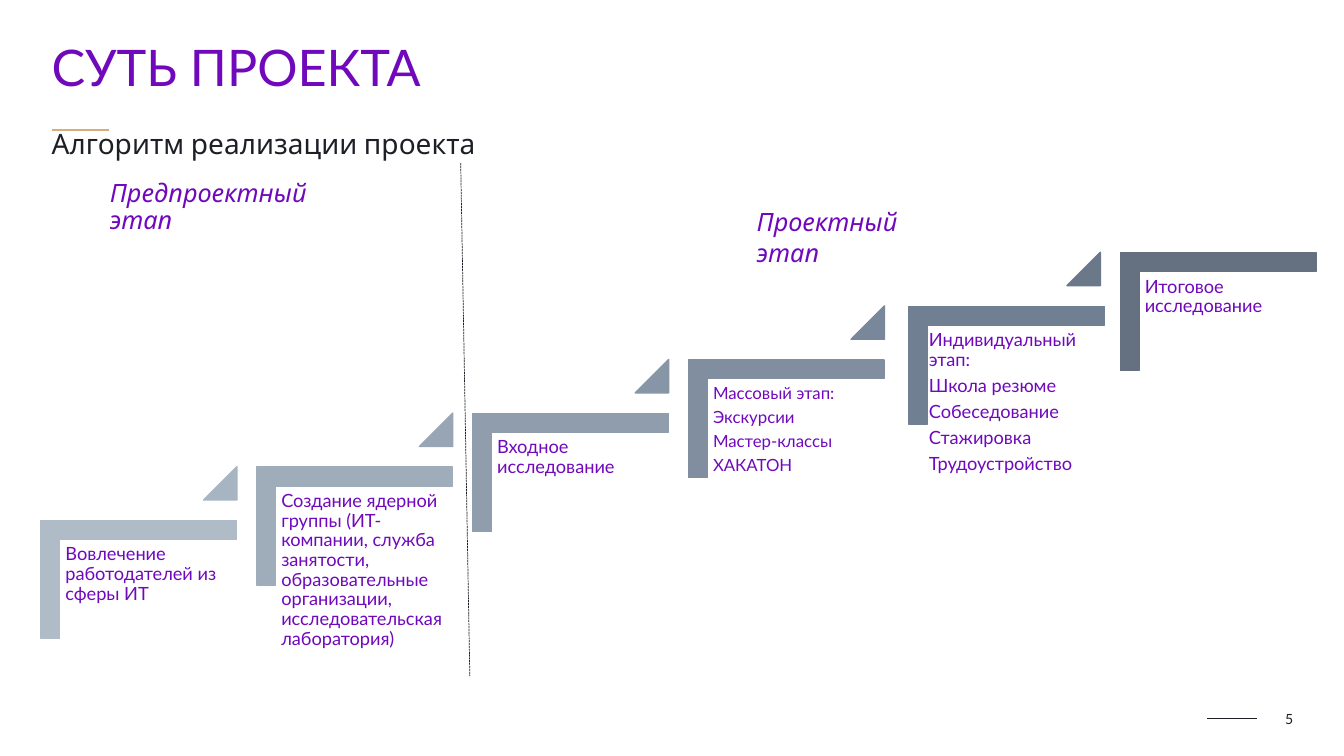
from dataclasses import dataclass

from lxml.etree import SubElement
from pptx import Presentation
from pptx.dml.color import RGBColor
from pptx.enum.dml import MSO_LINE
from pptx.enum.shapes import MSO_CONNECTOR, MSO_SHAPE
from pptx.enum.text import MSO_ANCHOR as Anchor, MSO_AUTO_SIZE as AutoSize, PP_ALIGN as Align
from pptx.oxml.ns import qn
from pptx.shapes.autoshape import Shape
from pptx.slide import Slide
from pptx.text.text import TextFrame
from pptx.util import Cm, Pt


@dataclass(frozen=True)
class Theme:
    purple: str = "7009BC"
    ink: str = "1C1F26"
    gold: str = "D6AE7B"
    body_font: str = "Lato"
    title_font: str = "Karla"
    headline: int = 36
    title: int = 20
    stage: int = 18
    step: int = 13
    step_small: int = 12
    number: int = 10


@dataclass(frozen=True)
class Step:
    lines: tuple[str, ...]
    corner: str
    triangle: str | None = None
    size: int = Theme.step
    nudge: float = 0


@dataclass(frozen=True)
class Rule:
    start: tuple[float, float]
    end: tuple[float, float]
    color: str
    width: float
    dash: MSO_LINE | None = None


THEME = Theme()

# Staircase geometry, cm
PITCH, RISE = 5.44, 1.35
CORNER = (2.01, 12.14, 2.97, 4.93)
LABEL = (1.52, 13.61, 4.45, 3.89)
TRIANGLE = (5.13, 11.76, 0.84, 0.84)
THICKNESS = 0.16

STEPS = (
    Step(("Вовлечение работодателей из сферы ИТ",), "AFBBC7", "A7B4C1"),
    Step(("Создание ядерной группы (ИТ-компании, служба занятости, образовательные "
          "организации, исследовательская лаборатория)",), "9FACBA", "97A5B4"),
    Step(("Входное исследование",), "8F9DAD", "8796A7"),
    Step(("Массовый этап:", "Экскурсии", "Мастер-классы", "ХАКАТОН"),
         "808EA0", "788799", size=THEME.step_small),
    Step(("Индивидуальный этап:", "Школа резюме", "Собеседование", "Стажировка",
          "Трудоустройство"), "717F92", "6B788A", nudge=0.11),
    Step(("Итоговое исследование",), "657181"),
)

RULES = (
    Rule((1.3, 3.28), (2.74, 3.28), THEME.gold, 1.5),
    Rule((30.43, 18.11), (31.67, 18.11), THEME.ink, 1),
    Rule((11.61, 4.11), (11.84, 17.04), THEME.ink, 0.5, MSO_LINE.SQUARE_DOT),
)


def write(tf: TextFrame, *lines: str, size: float, color: str = THEME.purple,
          font: str = THEME.body_font, italic: bool = False, spacing: float = 0.9,
          after: float = 0, align: Align = Align.LEFT, anchor: Anchor = Anchor.TOP,
          inset: tuple[float, float] = (0, 0), grow: bool = True) -> None:
    tf.word_wrap = True
    tf.auto_size = AutoSize.SHAPE_TO_FIT_TEXT if grow else AutoSize.NONE
    tf.vertical_anchor = anchor
    tf.margin_left = tf.margin_right = Cm(inset[0])
    tf.margin_top = tf.margin_bottom = Cm(inset[1])
    for i, line in enumerate(lines):
        p = tf.add_paragraph() if i else tf.paragraphs[0]
        p.alignment = align
        p.line_spacing = spacing
        p.space_before = Pt(0)
        p.space_after = Pt(after)
        r = p.add_run()
        r.text = line
        r.font.name, r.font.size, r.font.italic = font, Pt(size), italic
        r.font.color.rgb = RGBColor.from_string(color)


def add_text(s: Slide, box: tuple[float, ...], *lines: str, **style) -> None:
    write(s.shapes.add_textbox(*map(Cm, box)).text_frame, *lines, **style)


def add_rule(s: Slide, rule: Rule) -> None:
    c = s.shapes.add_connector(MSO_CONNECTOR.STRAIGHT, *map(Cm, rule.start + rule.end))
    c.line.color.rgb = RGBColor.from_string(rule.color)
    c.line.width = Pt(rule.width)
    if rule.dash:
        c.line.dash_style = rule.dash
    SubElement(c._element.spPr, qn("a:effectLst"))


def add_solid(s: Slide, kind: MSO_SHAPE, box: tuple[float, ...], color: str) -> Shape:
    sp = s.shapes.add_shape(kind, *map(Cm, box))
    sp.shadow.inherit = False
    sp.fill.solid()
    sp.fill.fore_color.rgb = sp.line.color.rgb = RGBColor.from_string(color)
    sp.line.width = Pt(1)
    return sp


def climb(box: tuple[float, ...], i: int, nudge: float = 0) -> tuple[float, ...]:
    x, y, w, h = box
    return x + i * PITCH + nudge, y - i * RISE, w, h


def add_step(s: Slide, i: int, step: Step) -> None:
    corner = add_solid(s, MSO_SHAPE.CORNER, climb(CORNER, i, step.nudge), step.corner)
    corner.rotation = 90
    for side in range(2):
        corner.adjustments[side] = THICKNESS
    add_text(s, climb(LABEL, i), *step.lines, size=step.size, after=0.35 * step.size,
             inset=(0.13, 0.13), grow=False)
    if step.triangle:
        sp = add_solid(s, MSO_SHAPE.ISOSCELES_TRIANGLE, climb(TRIANGLE, i), step.triangle)
        sp.adjustments[0] = 1


def main() -> None:
    prs = Presentation()
    prs.slide_width, prs.slide_height = Cm(33.87), Cm(19.05)
    s = prs.slides.add_slide(prs.slide_layouts[5])

    # Title and headline
    title = s.shapes.title
    title.left, title.top, title.width, title.height = map(Cm, (1.3, 3.25, 11.94, 0.79))
    write(title.text_frame, "Алгоритм реализации проекта", size=THEME.title,
          color=THEME.ink, font=THEME.title_font, anchor=Anchor.BOTTOM)
    add_text(s, (1.3, 1.09, 31.27, 1.4), "СУТЬ ПРОЕКТА", size=THEME.headline)

    # Staircase
    for i, step in enumerate(STEPS):
        add_step(s, i, step)

    # Rules and the stage divider
    for rule in RULES:
        add_rule(s, rule)

    # Stage names
    add_text(s, (2.77, 5.23, 6.02, 0.69), "Предпроектный этап", size=THEME.stage,
             font=THEME.title_font, italic=True, anchor=Anchor.BOTTOM)
    add_text(s, (18.82, 5.08, 4.37, 1.02), "Проектный этап", size=THEME.stage,
             font=THEME.title_font, italic=True, spacing=1, inset=(0.25, 0.13))

    # Slide number
    add_text(s, (32.13, 17.91, 0.46, 0.43), "5", size=THEME.number, color=THEME.ink,
             spacing=1, align=Align.RIGHT, anchor=Anchor.MIDDLE)

    prs.save("out.pptx")


if __name__ == "__main__":
    main()
